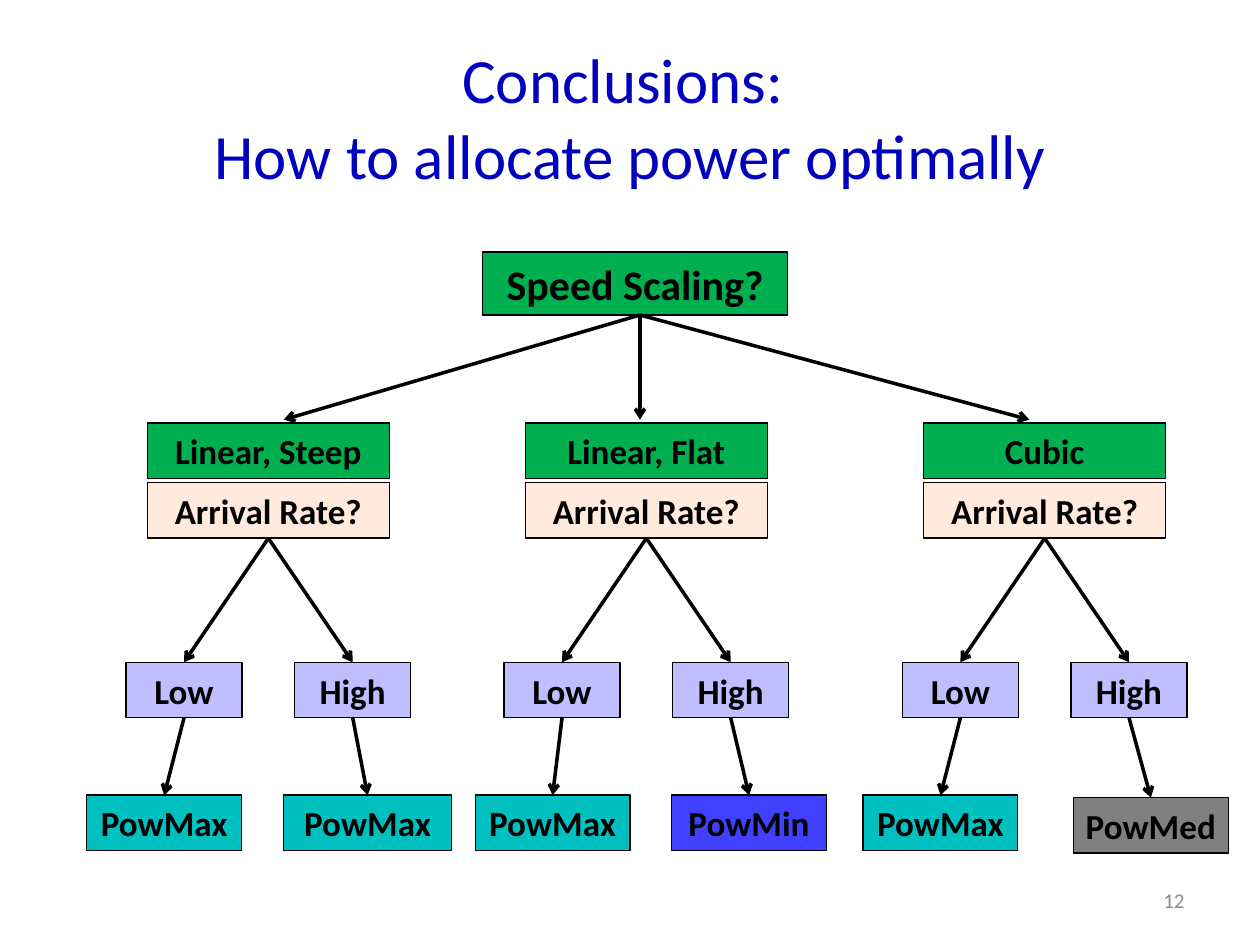
from lxml import etree
from pptx import Presentation
from pptx.dml.color import RGBColor
from pptx.enum.shapes import MSO_CONNECTOR, MSO_SHAPE
from pptx.enum.text import MSO_ANCHOR, PP_ALIGN
from pptx.oxml.ns import qn
from pptx.util import Cm, Pt

RECT, STRAIGHT = MSO_SHAPE.RECTANGLE, MSO_CONNECTOR.STRAIGHT
MIDDLE, CENTER, RIGHT = MSO_ANCHOR.MIDDLE, PP_ALIGN.CENTER, PP_ALIGN.RIGHT
TOP_SIDE, BOTTOM_SIDE = 0, 2

THEME = {
    "font": "Calibri",
    "title": "0000BF", "number": "8C8C8C", "ink": "000000",
    "scaling": "00B050", "question": "FFEADD", "rate": "BFBFFF",
    "PowMax": "00BFBF", "PowMin": "4040FF", "PowMed": "808080",
    "title_size": 36, "root_size": 24, "node_size": 20, "number_size": 12,
    "border": 0.75, "arrow": 2,
}


def color(name):
    return RGBColor.from_string(THEME[name])


def write(sp, text, size, ink="ink", bold=False, align=CENTER, wrap=True):
    tf = sp.text_frame
    tf.text = text
    tf.word_wrap = wrap
    tf.vertical_anchor = MIDDLE
    p = tf.paragraphs[0]
    p.alignment = align
    for r in p.runs:
        for key, value in {"name": THEME["font"], "size": Pt(THEME[size]), "bold": bold}.items():
            setattr(r.font, key, value)
        r.font.color.rgb = color(ink)


prs = Presentation()
prs.slide_width, prs.slide_height = Cm(25.4), Cm(19.05)
s = prs.slides.add_slide(prs.slide_layouts[5])

title = s.shapes.title
title.left, title.top, title.width, title.height = Cm(1.27), Cm(0.76), Cm(22.86), Cm(3.18)
write(title, "Conclusions: \vHow to allocate power optimally", "title_size", "title")

number = s.shapes.add_textbox(Cm(18.2), Cm(17.65), Cm(5.93), Cm(1.01))
write(number, "12", "number_size", "number", align=RIGHT)

# Branch: left edge, label, then left, top, width and label of each outcome
NODE_H, BRANCH_W, RATE_W = 1.12, 4.88, 2.34
BRANCH_TOP, QUESTION_TOP, RATE_TOP = 8.53, 9.73, 13.35
branches = [
    (2.97, "Linear, Steep", [(1.75, 16.03, 3.12, "PowMax"), (5.72, 16.03, 3.38, "PowMax")]),
    (10.59, "Linear, Flat", [(9.58, 16.03, 3.12, "PowMax"), (13.54, 16.03, 3.12, "PowMin")]),
    (18.62, "Cubic", [(17.4, 16.03, 3.12, "PowMax"), (21.64, 16.08, 3.12, "PowMed")]),
]
rates = [("Low", -0.43), ("High", 2.97)]

# Boxes: key, left, top, width, height, label, fill, type size
boxes = [("root", 9.73, 5.08, 6.15, 1.27, "Speed Scaling?", "scaling", "root_size")]
links = []
for x, label, outcomes in branches:
    question = (label, "question")
    boxes += [
        (label, x, BRANCH_TOP, BRANCH_W, NODE_H, label, "scaling", "node_size"),
        (question, x, QUESTION_TOP, BRANCH_W, NODE_H, "Arrival Rate?", "question", "node_size"),
    ]
    for (rate, dx), (left, top, width, policy) in zip(rates, outcomes):
        rate_key, policy_key = (label, rate), (label, rate, policy)
        boxes += [
            (rate_key, x + dx, RATE_TOP, RATE_W, NODE_H, rate, "rate", "node_size"),
            (policy_key, left, top, width, NODE_H, policy, policy, "node_size"),
        ]
        links += [(question, rate_key), (rate_key, policy_key)]

nodes = {}
for key, left, top, width, height, label, fill, size in boxes:
    sp = s.shapes.add_shape(RECT, Cm(left), Cm(top), Cm(width), Cm(height))
    sp.shadow.inherit = False
    sp.fill.solid()
    sp.fill.fore_color.rgb = color(fill)
    sp.line.color.rgb = color("ink")
    sp.line.width = Pt(THEME["border"])
    write(sp, label, size, bold=True, wrap=False)
    nodes[key] = sp

# The root's arrows stop just above the branch boxes
arrows = [s.shapes.add_connector(STRAIGHT, Cm(12.9), Cm(6.35), Cm(x), Cm(8.46))
          for x in (5.72, 12.9, 20.75)]
for start, end in links:
    arrow = s.shapes.add_connector(STRAIGHT, 0, 0, 0, 0)
    arrow.begin_connect(nodes[start], BOTTOM_SIDE)
    arrow.end_connect(nodes[end], TOP_SIDE)
    arrows.append(arrow)

for arrow in arrows:
    arrow.line.color.rgb = color("ink")
    arrow.line.width = Pt(THEME["arrow"])
    etree.SubElement(arrow.line._get_or_add_ln(), qn("a:tailEnd"), type="arrow")
    etree.SubElement(arrow._element.spPr, qn("a:effectLst"))

prs.save("out.pptx")
